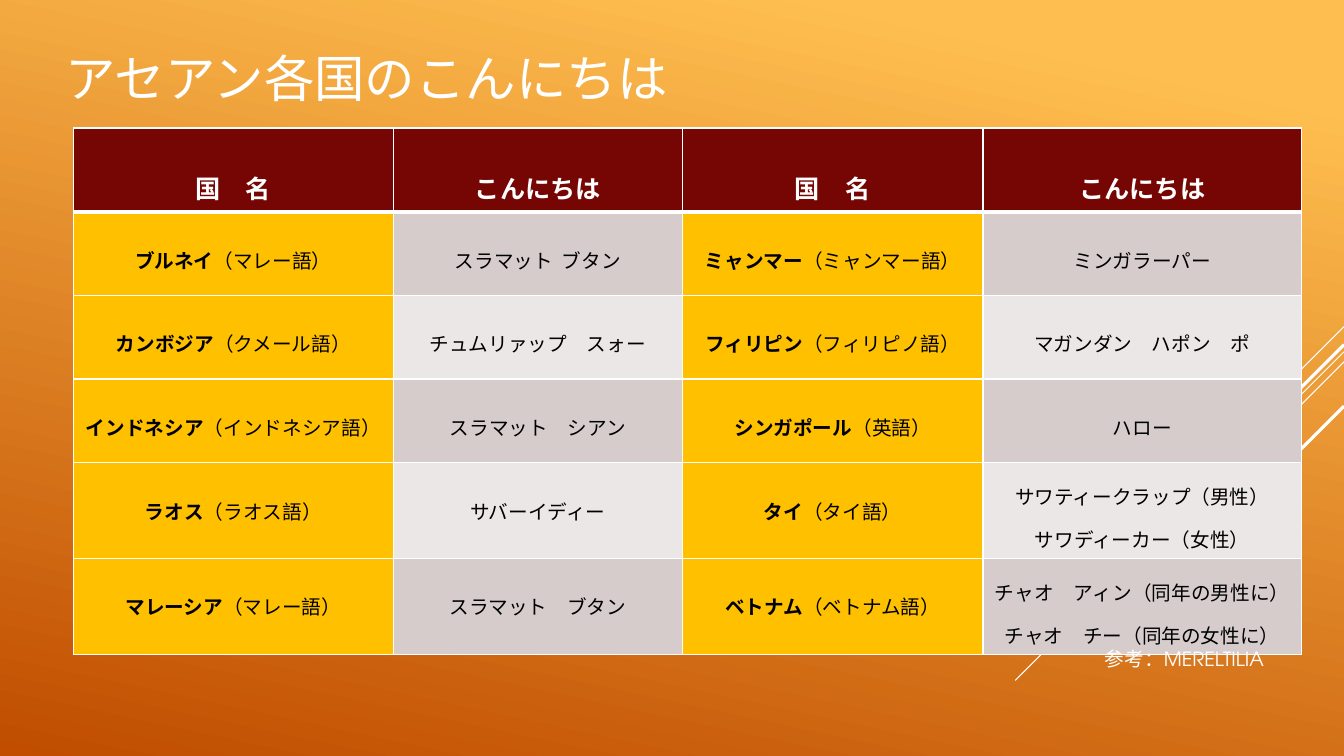
from lxml.etree import SubElement
from pptx import Presentation
from pptx.dml.color import RGBColor
from pptx.enum.shapes import MSO_CONNECTOR as Connector
from pptx.enum.text import MSO_ANCHOR as Anchor, PP_ALIGN as Align
from pptx.oxml import parse_xml
from pptx.oxml.ns import nsdecls, qn
from pptx.util import Inches, Pt

JAPANESE, LATIN = "Noto Sans CJK JP", "TeX Gyre Adventor"
WHITE, BLACK, MAROON, AMBER = "FFFFFF", "000000", "760603", "FFC000"
GREETING_BANDS = ["D6CCCC", "ECE7E7"]
COLUMN_WIDTHS = [3.17, 2.87, 2.98, 3.16]
ROW_HEIGHT = 0.83
HEADINGS = ["国　名", "こんにちは"] * 2
GREETINGS = [
    [("ブルネイ", "（マレー語）"), ["スラマット  ブタン"],
     ("ミャンマー", "（ミャンマー語）"), ["ミンガラーパー"]],
    [("カンボジア", "（クメール語）"), ["チュムリァップ　スォー"],
     ("フィリピン", "（フィリピノ語）"), ["マガンダン　ハポン　ポ"]],
    [("インドネシア", "（インドネシア語）"), ["スラマット　シアン"],
     ("シンガポール", "（英語）"), ["ハロー"]],
    [("ラオス", "（ラオス語）"), ["サバーイディー"],
     ("タイ", "（タイ語）"), ["サワティークラップ（男性）", "サワディーカー（女性）"]],
    [("マレーシア", "（マレー語）"), ["スラマット　ブタン"],
     ("ベトナム", "（ベトナム語）"),
     ["チャオ　アィン（同年の男性に）", "チャオ　チー（同年の女性に）"]],
]
DIAGONALS = [(3.24, 1, 0.75), (3.49, 3.26, 0.75), (3.59, 2.07, 0.75),
             (3.42, 1.91, 2.25), (4.03, 1.39, 2.25)]


def rgb(value):
    """Turn a hex string into a colour."""
    return RGBColor.from_string(value)


def apply_format(target, values):
    """Set every attribute named in a dict."""
    for name, value in values.items():
        setattr(target, name, value)


def add_run(paragraph, text, size, color, bold=False, font=LATIN):
    """Append formatted text with a Japanese font for its kana and kanji."""
    run = paragraph.add_run()
    run.text = text
    apply_format(run.font, {"size": Pt(size), "bold": bold, "name": font})
    run.font.color.rgb = rgb(color)
    SubElement(run.font._element, qn("a:ea"), typeface=JAPANESE)


def paint_background(slide):
    """Fill the background with the orange gradient."""
    fill = slide.background.fill
    fill.gradient()
    fill.gradient_angle = 258
    for stop, (position, color) in zip(fill.gradient_stops, [(0.1, "FFBF50"), (1, "C04D00")]):
        stop.position = position
        stop.color.rgb = rgb(color)


def add_diagonal(slide, top, reach, weight):
    """Draw a 45 degree line down from the right edge."""
    right = 13.33
    diagonal = slide.shapes.add_connector(
        Connector.STRAIGHT, Inches(right), Inches(top), Inches(right - reach), Inches(top + reach))
    diagonal.line.color.rgb = rgb(WHITE)
    diagonal.line.width = Pt(weight)
    SubElement(diagonal._element.spPr, qn("a:effectLst"))


def add_title(slide, text):
    """Place and fill the title placeholder."""
    title = slide.shapes.title
    apply_format(title, {"left": Inches(0.55), "top": Inches(-0.06),
                         "width": Inches(9.33), "height": Inches(1.65)})
    title.text_frame.vertical_anchor = Anchor.MIDDLE
    heading = title.text_frame.paragraphs[0]
    heading.alignment = Align.LEFT
    add_run(heading, text, 36, WHITE, font=JAPANESE)


def style_cell(cell, color, top=1, bottom=1):
    """Fill a cell and draw its white borders."""
    cell.fill.solid()
    cell.fill.fore_color.rgb = rgb(color)
    properties = cell._tc.get_or_add_tcPr()
    for index, (side, weight) in enumerate(zip("LRTB", [1, 1, top, bottom])):
        properties.insert(index, parse_xml(
            f'<a:ln{side} {nsdecls("a")} w="{Pt(weight)}"><a:solidFill>'
            f'<a:srgbClr val="{WHITE}"/></a:solidFill></a:ln{side}>'))


def write_cell(cell, lines, size, color):
    """Write centred lines, each a list of text and bold pairs."""
    for index, line in enumerate(lines):
        frame = cell.text_frame
        paragraph = frame.add_paragraph() if index else frame.paragraphs[0]
        apply_format(paragraph, {"alignment": Align.CENTER,
                                 "line_spacing": 1.5 if len(lines) > 1 else 2.0})
        for text, bold in line:
            add_run(paragraph, text, size, color, bold)


def add_greetings_table(slide):
    """Build the table of countries and greetings."""
    row_count = len(GREETINGS) + 1
    table = slide.shapes.add_table(
        row_count, len(COLUMN_WIDTHS), Inches(0.73), Inches(1.27),
        Inches(sum(COLUMN_WIDTHS)), Inches(ROW_HEIGHT * row_count)).table
    for column, width in zip(table.columns, COLUMN_WIDTHS):
        column.width = Inches(width)
    for row in table.rows:
        row.height = Inches(ROW_HEIGHT)
    for column, heading in enumerate(HEADINGS):
        cell = table.cell(0, column)
        style_cell(cell, MAROON, bottom=3)
        write_cell(cell, [[(heading, True)]], 18, WHITE)
    for row, entries in enumerate(GREETINGS, 1):
        for column, entry in enumerate(entries):
            cell = table.cell(row, column)
            if column % 2:
                color = GREETING_BANDS[(row - 1) % 2]
                lines = [[(greeting, False)] for greeting in entry]
            else:
                color = AMBER
                lines = [list(zip(entry, [True, False]))]
            style_cell(cell, color, top=3 if row == 1 else 1)
            write_cell(cell, lines, 14, BLACK)


def add_reference(slide, text):
    """Add the reference below the table."""
    frame = slide.shapes.add_textbox(
        Inches(10.86), Inches(6.37), Inches(2.07), Inches(0.34)).text_frame
    frame.word_wrap = True
    add_run(frame.paragraphs[0], text, 14, WHITE)


def main():
    """Build and save the slide."""
    deck = Presentation()
    apply_format(deck, {"slide_width": Inches(13.33), "slide_height": Inches(7.5)})
    slide = deck.slides.add_slide(deck.slide_layouts[5])
    paint_background(slide)
    for diagonal in DIAGONALS:
        add_diagonal(slide, *diagonal)
    add_title(slide, "アセアン各国のこんにちは")
    add_greetings_table(slide)
    add_reference(slide, "参考：MERELTILIA")
    deck.save("out.pptx")


if __name__ == "__main__":
    main()
